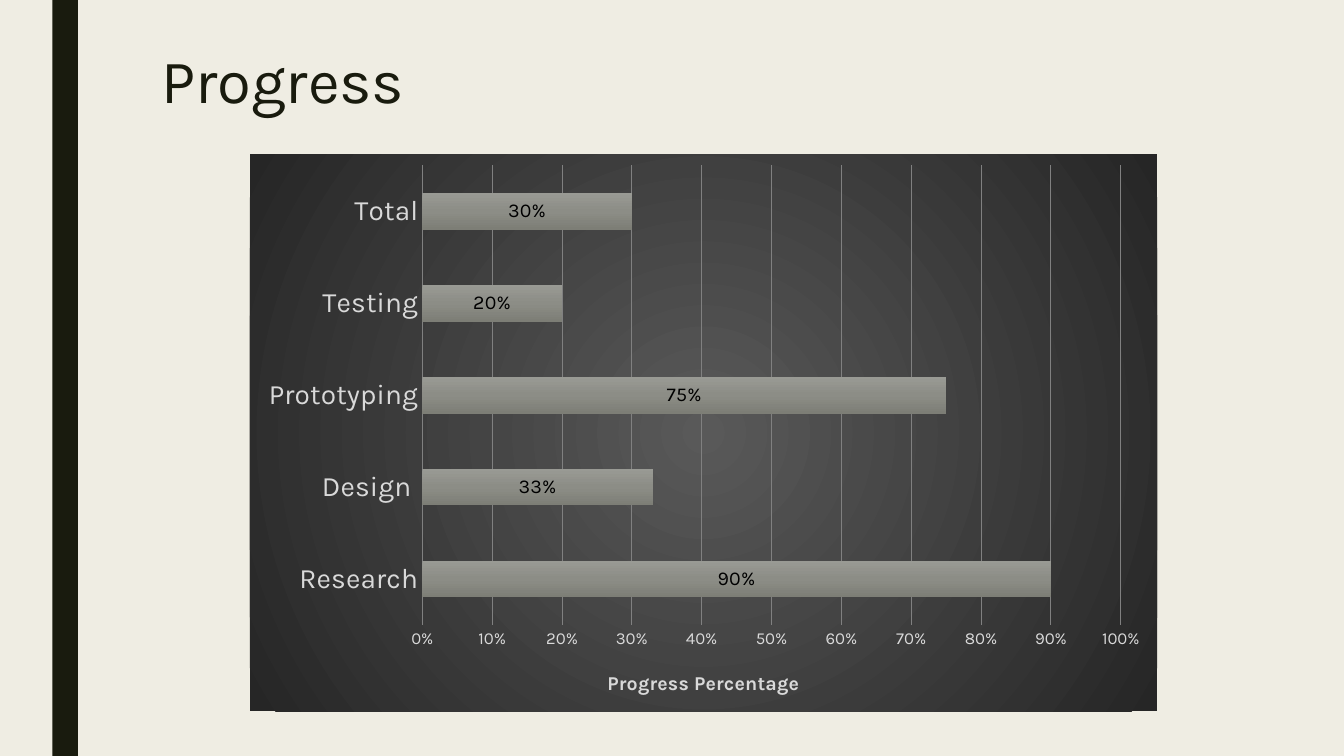
from lxml import etree
from pptx import Presentation
from pptx import util as u
from pptx.chart.data import CategoryChartData
from pptx.dml.color import RGBColor
from pptx.enum import chart as ch, shapes, text
from pptx.oxml import parse_xml

A = "http://schemas.openxmlformats.org/drawingml/2006/main"
C = "http://schemas.openxmlformats.org/drawingml/2006/chart"

PROGRESS = {"Research": 0.9, "Design ": 0.33, "Prototyping": 0.75, "Testing": 0.2, "Total": 0.3}


class ProgressSlide:
    """Style and current slide; places are shares of the slide's width and height."""

    FONT = "Karla"
    COLORS = {
        "paper": "EFEDE3", "ink": "191B0E", "label": "000000", "axis": "D9D9D9", "grid": "808080",
        "glow": "595959", "edge": "262626",
        "bar_top": "999A94", "bar_mid": "8C8D86", "bar_low": "7D7E76",
    }
    RADIAL = '<a:path path="circle"><a:fillToRect l="50000" t="50000" r="50000" b="50000"/></a:path>'
    DOWNWARD = '<a:lin ang="5400000" scaled="0"/>'

    def __init__(self, deck):
        self.width, self.height = deck.slide_width, deck.slide_height
        self.slide = deck.slides.add_slide(deck.slide_layouts[6])
        backdrop = self.slide.background.fill
        backdrop.solid()
        backdrop.fore_color.rgb = self.color("paper")

    def color(self, name):
        return RGBColor.from_string(self.COLORS[name])

    def place(self, left, top, width, height):
        return (round(left * self.width), round(top * self.height),
                round(width * self.width), round(height * self.height))

    def style(self, font, size, color, bold=False):
        font.name, font.size, font.bold = self.FONT, u.Pt(size), bold
        font.color.rgb = self.color(color)

    def gradient(self, names, direction):
        step = 100000 // (len(names) - 1)
        stops = "".join(f'<a:gs pos="{i * step}"><a:srgbClr val="{self.COLORS[name]}"/></a:gs>'
                        for i, name in enumerate(names))
        return parse_xml(f'<a:gradFill xmlns:a="{A}" rotWithShape="1">'
                         f'<a:gsLst>{stops}</a:gsLst>{direction}</a:gradFill>')

    def layout(self, **settings):
        rows = "".join(f'<c:{key} val="{value}"/>' for key, value in settings.items())
        return parse_xml(f'<c:layout xmlns:c="{C}"><c:manualLayout>{rows}</c:manualLayout></c:layout>')

    def stripe(self, *share):
        band = self.slide.shapes.add_shape(shapes.MSO_SHAPE.RECTANGLE, *self.place(*share))
        band.shadow.inherit = False
        band.fill.solid()
        band.fill.fore_color.rgb = self.color("ink")
        band.line.fill.background()

    def heading(self, words, *share):
        frame = self.slide.shapes.add_textbox(*self.place(*share)).text_frame
        frame.word_wrap = True
        frame.vertical_anchor = text.MSO_ANCHOR.TOP
        frame.text = words
        line = frame.paragraphs[0]
        line.line_spacing = 0.89
        self.style(line.runs[0].font, 44, "ink")

    def progress_chart(self, progress, axis_title, *share):
        table = CategoryChartData(number_format="0%")
        table.categories = list(progress)
        table.add_series("Series 1", list(progress.values()))
        chart = self.slide.shapes.add_chart(
            ch.XL_CHART_TYPE.BAR_STACKED, *self.place(*share), table).chart
        chart.has_title = chart.has_legend = False
        self.style(chart.font, 10, "label")
        self.panel(chart)
        self.bars(chart.plots[0])
        self.axes(chart, axis_title)

    def panel(self, chart):
        panel = parse_xml(f'<c:spPr xmlns:c="{C}" xmlns:a="{A}"><a:ln><a:noFill/></a:ln></c:spPr>')
        panel.insert(0, self.gradient(["glow", "edge"], self.RADIAL))
        body = chart._chartSpace.find(etree.QName(C, "chart"))
        body.addnext(panel)
        area = body.find(etree.QName(C, "plotArea"))
        for automatic in area.findall(etree.QName(C, "layout")):
            area.remove(automatic)
        area.insert(0, self.layout(layoutTarget="inner", xMode="edge", yMode="edge",
                                   x=0.19, y=0.02, w=0.77, h=0.825))

    def bars(self, plot):
        plot.gap_width, plot.overlap, plot.vary_by_categories = 150, 100, False
        series = plot.series[0]
        series.format.fill.gradient()
        bar = series._element.spPr
        bar.replace(bar[0], self.gradient(["bar_top", "bar_mid", "bar_low"], self.DOWNWARD))
        plot.has_data_labels = True
        labels = plot.data_labels
        labels.show_value = True
        labels.number_format, labels.number_format_is_linked = "0%", False
        labels.position = ch.XL_LABEL_POSITION.CENTER
        self.style(labels.font, 14, "label")

    def axes(self, chart, axis_title):
        for axis, size in ((chart.category_axis, 20), (chart.value_axis, 12)):
            axis.major_tick_mark = axis.minor_tick_mark = ch.XL_TICK_MARK.NONE
            axis.format.line.fill.background()
            self.style(axis.tick_labels.font, size, "axis")
        scale = chart.value_axis
        scale.minimum_scale, scale.maximum_scale, scale.major_unit = 0, 1, 0.1
        scale.tick_labels.number_format = "0%"
        scale.tick_labels.number_format_is_linked = False
        scale.has_major_gridlines = True
        rule = scale.major_gridlines.format.line
        rule.width = u.Pt(0.75)
        rule.color.rgb = self.color("grid")
        caption = scale.axis_title
        caption.text_frame.text = axis_title
        self.style(caption.text_frame.paragraphs[0].runs[0].font, 14, "axis", bold=True)
        holder = caption._element
        for automatic in holder.findall(etree.QName(C, "layout")):
            holder.remove(automatic)
        holder.find(etree.QName(C, "tx")).addnext(
            self.layout(xMode="edge", yMode="edge", x=0.39, y=0.92))


def main():
    deck = Presentation()
    deck.slide_width, deck.slide_height = u.Inches(13.33), u.Inches(7.5)
    page = ProgressSlide(deck)
    page.stripe(0.039, 0, 0.019, 1)
    page.progress_chart(PROGRESS, "Progress Percentage", 0.186, 0.204, 0.675, 0.737)
    page.heading("Progress", 0.1125, 0.061, 0.788, 0.216)
    deck.save("out.pptx")


if __name__ == "__main__":
    main()
